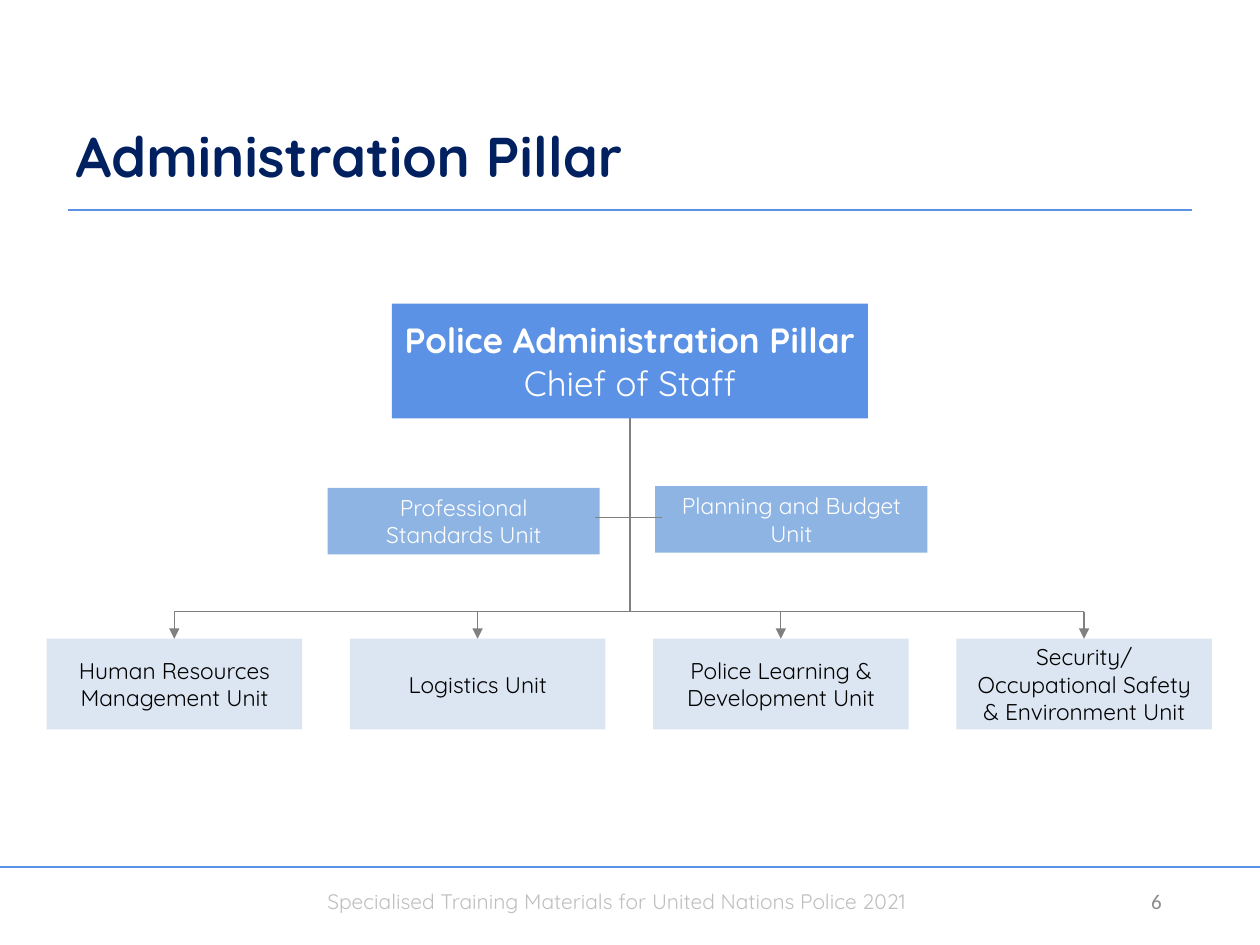
from pptx import Presentation
from pptx.dml.color import RGBColor
from pptx.enum.shapes import MSO_CONNECTOR, MSO_SHAPE
from pptx.enum.text import MSO_ANCHOR, PP_ALIGN
from pptx.oxml.ns import qn
from pptx.util import Pt
from lxml import etree

STRAIGHT = MSO_CONNECTOR.STRAIGHT
BOX = MSO_SHAPE.ROUNDED_RECTANGLE
MIDDLE, BOTTOM, TOP = MSO_ANCHOR.MIDDLE, MSO_ANCHOR.BOTTOM, MSO_ANCHOR.TOP
LEFT, CENTER, RIGHT = PP_ALIGN.LEFT, PP_ALIGN.CENTER, PP_ALIGN.RIGHT

FONT = "Quicksand"
BLUE, MID_BLUE, PALE_BLUE, NAVY = "5B92E5", "8EB4E3", "DCE6F2", "002060"
WHITE, BLACK, GREY = "FFFFFF", "000000", "808080"

BRANCH_Y = 349.5
UNIT_LEFT, UNIT_PITCH = 26.6, 173.3
UNITS = [
    "Human Resources Management Unit",
    "Logistics Unit",
    "Police Learning & Development Unit",
    "Security/\vOccupational Safety & Environment Unit",
]


def color(value):
    return RGBColor.from_string(value)


def style(paragraph, size, ink, align=LEFT, font=FONT, bold=None):
    paragraph.alignment = align
    paragraph.font.size = Pt(size)
    paragraph.font.name = font
    paragraph.font.color.rgb = color(ink)
    paragraph.font.bold = bold


def add_title(slide, text):
    title = slide.shapes.title
    title.left, title.top, title.width, title.height = Pt(36), Pt(36), Pt(564), Pt(75.6)
    title.text_frame.text = text
    title.text_frame.vertical_anchor = BOTTOM
    heading = title.text_frame.paragraphs[0]
    style(heading, 32, NAVY, bold=True)
    heading.line_spacing = Pt(34.4)


def add_label(slide, text, place, ink, align, anchor, font):
    frame = slide.shapes.add_textbox(*map(Pt, place)).text_frame
    frame.word_wrap = True
    frame.vertical_anchor = anchor
    frame.text = text
    style(frame.paragraphs[0], 12, ink, align, font)


def add_box(slide, text, place, fill, ink, size=13, side_inset=7.2):
    box = slide.shapes.add_shape(BOX, *map(Pt, place))
    box.adjustments[0] = 0
    box.shadow.inherit = False
    box.fill.solid()
    box.fill.fore_color.rgb = color(fill)
    box.line.fill.background()
    frame = box.text_frame
    frame.word_wrap = True
    frame.vertical_anchor = MIDDLE
    frame.margin_top = frame.margin_bottom = 0
    frame.margin_left = frame.margin_right = Pt(side_inset)
    frame.text = text
    style(frame.paragraphs[0], size, ink, CENTER)
    return box


def add_line(slide, start, end, ink=GREY):
    line = slide.shapes.add_connector(STRAIGHT, *map(Pt, start + end))
    line.line.color.rgb = color(ink)
    line.line.width = Pt(0.75)
    etree.SubElement(line._element.spPr, qn("a:effectLst"))
    return line


def add_arrowhead(line):
    etree.SubElement(line.line._get_or_add_ln(), qn("a:tailEnd"), type="triangle")


def add_chief(slide):
    chief = add_box(slide, "", (224, 173.5, 272, 65.5), BLUE, WHITE, 20, 3)
    role = chief.text_frame.paragraphs[0]
    pillar = role.add_run()
    pillar.text = "Police Administration Pillar"
    pillar.font.bold = True
    role.add_line_break()
    role.add_run().text = "Chief of Staff"
    return chief


def add_units(slide):
    centers = []
    for index, name in enumerate(UNITS):
        left = UNIT_LEFT + index * UNIT_PITCH
        center = left + 73
        unit = add_box(slide, name, (left, 365, 146, 51.8), PALE_BLUE, BLACK)
        drop = add_line(slide, (center, BRANCH_Y), (center, 365))
        drop.end_connect(unit, 0)
        add_arrowhead(drop)
        centers.append(center)
    add_line(slide, (centers[0], BRANCH_Y), (centers[-1], BRANCH_Y))


def main():
    prs = Presentation()
    prs.slide_width, prs.slide_height = Pt(720), Pt(540)
    slide = prs.slides.add_slide(prs.slide_layouts[5])

    add_line(slide, (0, 495.4), (720, 495.4), BLUE)
    add_label(slide, "Specialised Training Materials for United Nations Police 2021",
              (180, 504, 360, 21.6), "BFBFBF", LEFT, TOP, FONT)
    add_line(slide, (39, 120), (681, 120), BLUE)
    add_label(slide, "6", (619, 500.5, 52, 29), "8C8C8C", RIGHT, MIDDLE, "Calibri")
    add_title(slide, "Administration Pillar")

    chief = add_chief(slide)
    add_box(slide, "Professional\vStandards Unit", (187.2, 278.8, 155.5, 38), MID_BLUE, WHITE)
    add_box(slide, "Planning and Budget Unit", (374.4, 277.8, 155.5, 38), MID_BLUE, WHITE)
    add_units(slide)
    trunk = add_line(slide, (360, 239), (360, BRANCH_Y))
    trunk.begin_connect(chief, 2)
    add_line(slide, (340, 295.7), (378, 295.7))

    prs.save("out.pptx")


if __name__ == "__main__":
    main()
